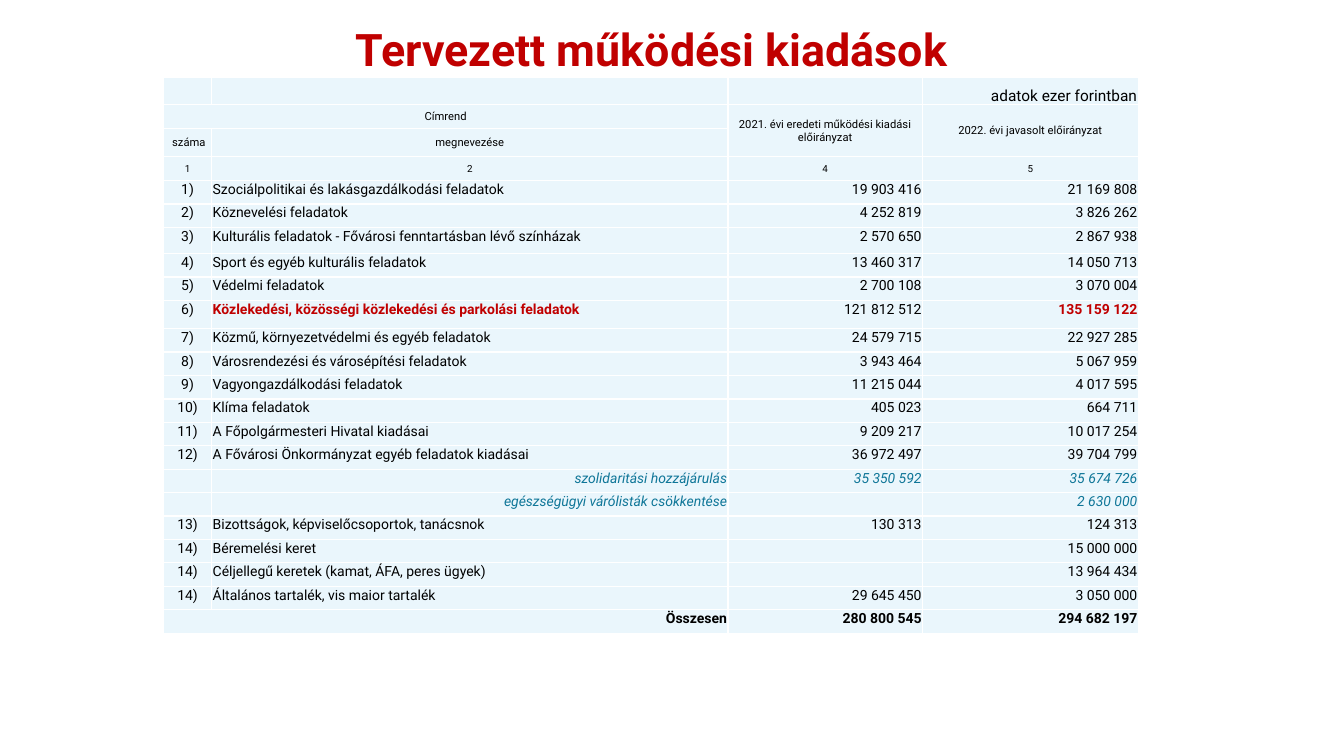
from lxml.etree import SubElement
from pptx import Presentation
from pptx.dml.color import RGBColor
from pptx.enum.text import MSO_ANCHOR, PP_ALIGN
from pptx.oxml.ns import qn
from pptx.util import Inches, Pt

FONT = "Roboto"
BLACK, RED, TEAL, WHITE, PALE_BLUE = "000000", "C00000", "0F7698", "FFFFFF", "EAF6FC"
LEFT, CENTER, RIGHT = PP_ALIGN.LEFT, PP_ALIGN.CENTER, PP_ALIGN.RIGHT

COLUMN_WIDTHS = [0.48, 5.12, 1.93, 2.14]
TABLE_HEIGHT = 5.52
ROW_COUNT = 23
TALLER_ROWS = {0: 0.27, 2: 0.28, 3: 0.24, 6: 0.26, 9: 0.28, 22: 0.24}
FIRST_BUDGET_ROW = 4

# Number, name, 2021 amount, 2022 amount
BUDGET = [
    ("1)", "Szociálpolitikai és lakásgazdálkodási feladatok", "19 903 416", "21 169 808"),
    ("2)", "Köznevelési feladatok", "4 252 819", "3 826 262"),
    ("3)", "Kulturális feladatok - Fővárosi fenntartásban lévő színházak", "2 570 650", "2 867 938"),
    ("4)", "Sport és egyéb kulturális feladatok", "13 460 317", "14 050 713"),
    ("5)", "Védelmi feladatok", "2 700 108", "3 070 004"),
    ("6)", "Közlekedési, közösségi közlekedési és parkolási feladatok", "121 812 512", "135 159 122"),
    ("7)", "Közmű, környezetvédelmi és egyéb feladatok", "24 579 715", "22 927 285"),
    ("8)", "Városrendezési és városépítési feladatok", "3 943 464", "5 067 959"),
    ("9)", "Vagyongazdálkodási feladatok", "11 215 044", "4 017 595"),
    ("10)", "Klíma feladatok", "405 023", "664 711"),
    ("11)", "A Főpolgármesteri Hivatal kiadásai", "9 209 217", "10 017 254"),
    ("12)", "A Fővárosi Önkormányzat egyéb feladatok kiadásai", "36 972 497", "39 704 799"),
    ("", "szolidaritási hozzájárulás", "35 350 592", "35 674 726"),
    ("", "egészségügyi várólisták csökkentése", "", "2 630 000"),
    ("13)", "Bizottságok, képviselőcsoportok, tanácsnok", "130 313", "124 313"),
    ("14)", "Béremelési keret", "", "15 000 000"),
    ("14)", "Céljellegű keretek (kamat, ÁFA, peres ügyek)", "", "13 964 434"),
    ("14)", "Általános tartalék, vis maior tartalék", "29 645 450", "3 050 000"),
    ("Összesen", "", "280 800 545", "294 682 197"),
]


def color(value):
    return RGBColor.from_string(value)


def add_text(paragraph, text, size, text_color=BLACK, bold=False, italic=False, align=LEFT):
    paragraph.alignment = align
    run = paragraph.add_run()
    run.text = text
    font = run.font
    font.name, font.size, font.bold, font.italic = FONT, Pt(size), bold, italic
    font.color.rgb = color(text_color)


def add_title(slide, text):
    title = slide.shapes.title
    title.left, title.top = Inches(0), Inches(0.17)
    title.width, title.height = Inches(12.93), Inches(0.89)
    frame = title.text_frame
    frame.word_wrap = True
    frame.vertical_anchor = MSO_ANCHOR.TOP
    add_text(frame.paragraphs[0], text, 32, RED, bold=True, align=CENTER)


def format_cell(cell):
    cell.margin_left = cell.margin_top = cell.margin_right = Inches(0.01)
    cell.margin_bottom = 0
    # White borders come before the fill
    properties = cell._tc.get_or_add_tcPr()
    for side in ("lnL", "lnR", "lnT", "lnB"):
        line = SubElement(properties, qn(f"a:{side}"), w=str(Pt(1)))
        fill = SubElement(line, qn("a:solidFill"))
        SubElement(fill, qn("a:srgbClr"), val=WHITE)
    cell.fill.solid()
    cell.fill.fore_color.rgb = color(PALE_BLUE)
    # A small end mark keeps empty cells from stretching their row
    paragraph = cell.text_frame.paragraphs[0]
    SubElement(paragraph._p, qn("a:endParaRPr"), sz="800")


def write_cell(table, row, column, text, size, anchor=MSO_ANCHOR.TOP, **style):
    if text:
        cell = table.cell(row, column)
        cell.vertical_anchor = anchor
        add_text(cell.text_frame.paragraphs[0], text, size, **style)


def add_budget_table(slide):
    frame = slide.shapes.add_table(
        ROW_COUNT, len(COLUMN_WIDTHS), Inches(1.62), Inches(0.77),
        Inches(sum(COLUMN_WIDTHS)), Inches(TABLE_HEIGHT))
    table = frame.table
    table.first_row = table.horz_banding = False
    for column, width in zip(table.columns, COLUMN_WIDTHS):
        column.width = Inches(width)
    plain_height = (TABLE_HEIGHT - sum(TALLER_ROWS.values())) / (ROW_COUNT - len(TALLER_ROWS))
    for index, row in enumerate(table.rows):
        row.height = Inches(TALLER_ROWS.get(index, plain_height))
        for cell in row.cells:
            format_cell(cell)
    last = ROW_COUNT - 1
    for start, end in [((1, 0), (1, 1)), ((1, 2), (2, 2)), ((1, 3), (2, 3)), ((last, 0), (last, 1))]:
        table.cell(*start).merge(table.cell(*end))
    return table


def write_header(table):
    write_cell(table, 0, 3, "adatok ezer forintban", 11, MSO_ANCHOR.BOTTOM, align=RIGHT)
    labels = [
        (1, 0, "Címrend"),
        (1, 2, "2021. évi eredeti működési kiadási előirányzat"),
        (1, 3, "2022. évi javasolt előirányzat"),
        (2, 0, " száma"),
        (2, 1, "megnevezése"),
    ]
    for row, column, text in labels:
        write_cell(table, row, column, text, 8, MSO_ANCHOR.MIDDLE, align=CENTER)
    for column, text in enumerate("1245"):
        write_cell(table, 3, column, text, 7, MSO_ANCHOR.MIDDLE, align=CENTER)


def write_budget(table):
    for row, entry in enumerate(BUDGET, FIRST_BUDGET_ROW):
        number = entry[0]
        total, detail = number == "Összesen", number == ""
        aligns = [RIGHT if total else CENTER, RIGHT if detail else LEFT, RIGHT, RIGHT]
        for column, (text, align) in enumerate(zip(entry, aligns)):
            highlight = number == "6)" and column in (1, 3)
            text_color = RED if highlight else TEAL if detail else BLACK
            write_cell(table, row, column, text, 10, align=align, text_color=text_color,
                       bold=total or highlight, italic=detail)


def main():
    presentation = Presentation()
    presentation.slide_width, presentation.slide_height = Inches(13.33), Inches(7.5)
    slide = presentation.slides.add_slide(presentation.slide_layouts[5])
    add_title(slide, "Tervezett működési kiadások")
    table = add_budget_table(slide)
    write_header(table)
    write_budget(table)
    presentation.save("out.pptx")


if __name__ == "__main__":
    main()
